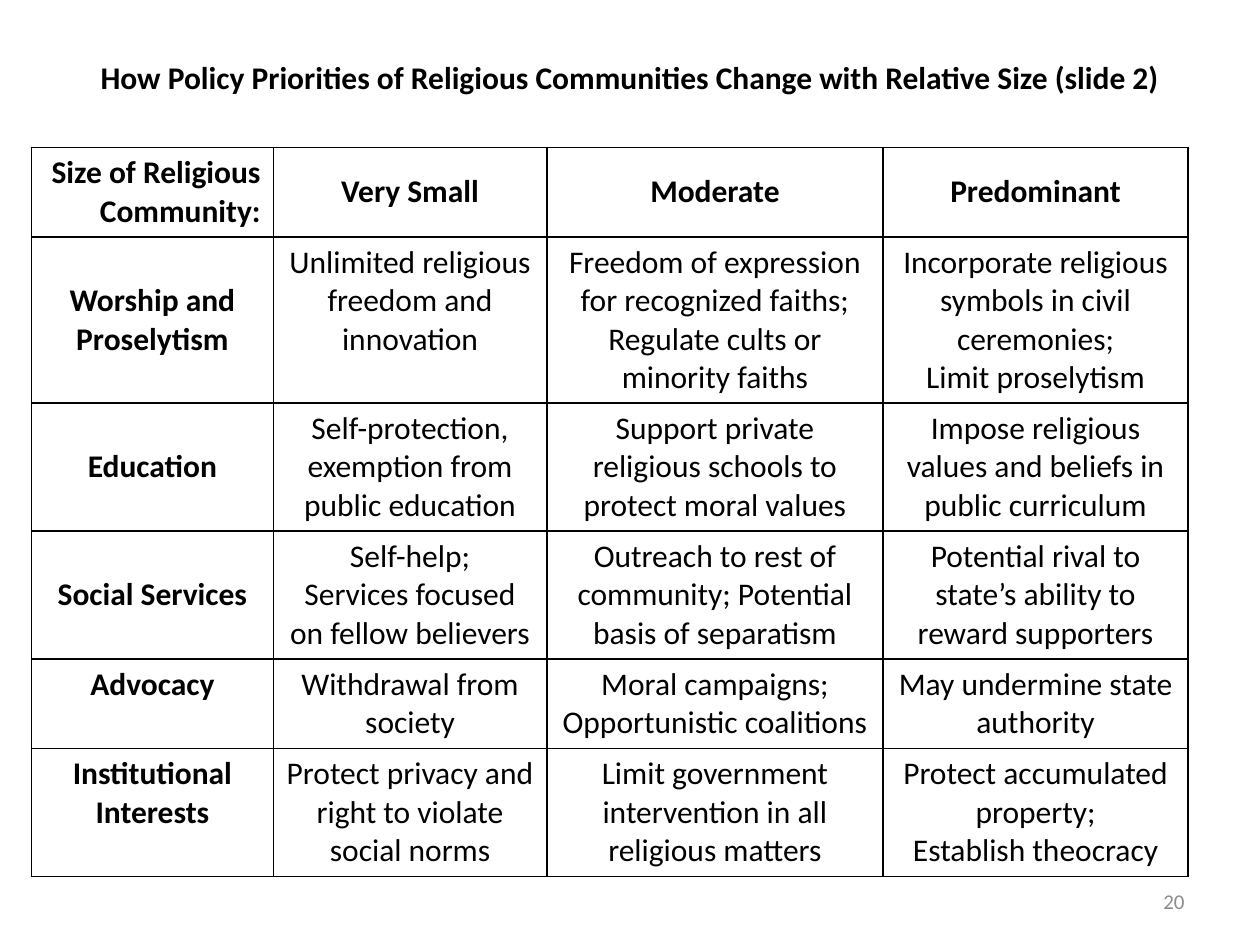
"""Build a slide with a table of policy priorities by size of religious community."""
from lxml.etree import SubElement
from pptx import Presentation
from pptx.dml.color import RGBColor as RGB
from pptx.enum.text import MSO_ANCHOR as ANCHOR, PP_ALIGN as ALIGN
from pptx.oxml import parse_xml
from pptx.oxml.ns import nsdecls, qn
from pptx.util import Inches, Pt

THEME = {
    "font": "Calibri", "ink": "000000", "muted": "8C8C8C",
    "body": 18, "small": 12, "border": 1,
}
COLS = [1.92, 2.17, 2.67, 2.42]
LINES = [2, 4, 3, 3, 2, 3]
LINE_HEIGHT, CELL_PADDING = 0.305, 0.1
MIDDLE_LABELS = ("Worship and Proselytism", "Education", "Social Services")
ROWS = [
    ["Size of Religious Community:", "Very Small", "Moderate", "Predominant"],
    ["Worship and Proselytism",
     "Unlimited religious freedom and innovation",
     "Freedom of expression for recognized faiths; Regulate cults or minority faiths",
     "Incorporate religious symbols in civil ceremonies;\nLimit proselytism"],
    ["Education",
     "Self-protection, exemption from public education",
     "Support private religious schools to protect moral values",
     "Impose religious values and beliefs in public curriculum"],
    ["Social Services",
     "Self-help;\nServices focused on fellow believers",
     "Outreach to rest of community; Potential basis of separatism",
     "Potential rival to state’s ability to reward supporters"],
    ["Advocacy",
     "Withdrawal from society",
     "Moral campaigns; Opportunistic coalitions",
     "May undermine state authority"],
    ["Institutional Interests",
     "Protect privacy and right to violate social norms",
     "Limit government intervention in all religious matters",
     "Protect accumulated property;\nEstablish theocracy"],
]


def write(tf, text, size, color, align, bold=False):
    tf.text = text
    tf.word_wrap = True
    for p in tf.paragraphs:
        p.alignment = align
        for r in p.runs:
            r.font.name = THEME["font"]
            r.font.size = Pt(size)
            r.font.bold = bold
            r.font.color.rgb = RGB.from_string(color)


def add_borders(cell):
    tc_pr = cell._tc.get_or_add_tcPr()
    for i, side in enumerate("LRTB"):
        ln = parse_xml(f'<a:ln{side} {nsdecls("a")} w="{Pt(THEME["border"])}"/>')
        fill = SubElement(ln, qn("a:solidFill"))
        SubElement(fill, qn("a:srgbClr"), val=THEME["ink"])
        tc_pr.insert(i, ln)


prs = Presentation()
prs.slide_width, prs.slide_height = Inches(10), Inches(7.5)
s = prs.slides.add_slide(prs.slide_layouts[6])

captions = [
    ("How Policy Priorities of Religious Communities Change with Relative Size (slide 2)",
     (0.25, 0.3, 9.5, 0.62), THEME["body"], THEME["ink"], ALIGN.CENTER, True),
    ("20", (7.17, 6.95, 2.33, 0.4), THEME["small"], THEME["muted"], ALIGN.RIGHT, False),
]
for text, box, size, color, align, bold in captions:
    tf = s.shapes.add_textbox(*map(Inches, box)).text_frame
    tf.vertical_anchor = ANCHOR.MIDDLE
    write(tf, text, size, color, align, bold)

heights = [n * LINE_HEIGHT + CELL_PADDING for n in LINES]
sp = s.shapes.add_table(len(ROWS), len(COLS), Inches(0.25), Inches(1.17),
                        Inches(sum(COLS)), Inches(sum(heights)))
table = sp.table
table.horz_banding = False
for col, width in zip(table.columns, COLS):
    col.width = Inches(width)

for i, (row, height) in enumerate(zip(ROWS, heights)):
    table.rows[i].height = Inches(height)
    for j, text in enumerate(row):
        cell = table.cell(i, j)
        cell.fill.background()
        add_borders(cell)
        middle = i == 0 or text in MIDDLE_LABELS
        cell.vertical_anchor = ANCHOR.MIDDLE if middle else ANCHOR.TOP
        align = ALIGN.RIGHT if i == j == 0 else ALIGN.CENTER
        write(cell.text_frame, text, THEME["body"], THEME["ink"], align, i == 0 or j == 0)

prs.save("out.pptx")
